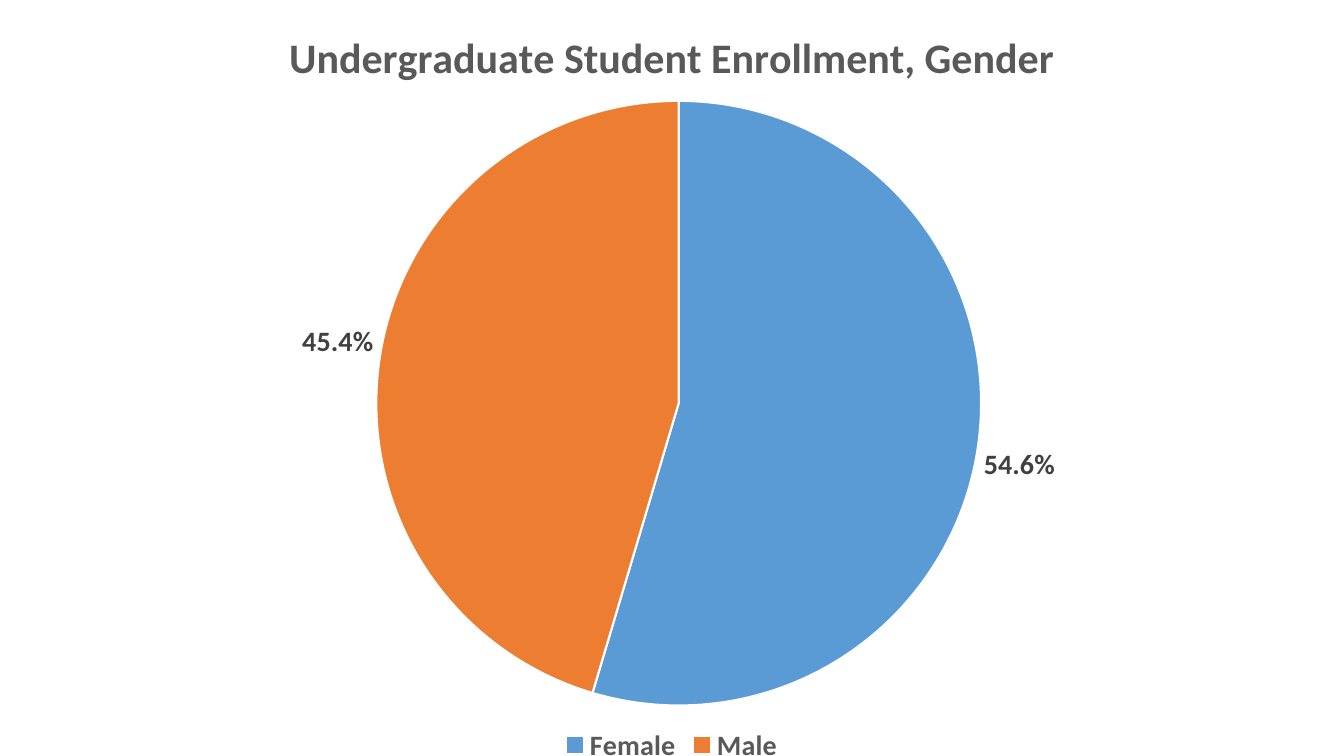
from lxml import etree
from pptx import Presentation
from pptx.chart.data import CategoryChartData
from pptx.dml.color import RGBColor
from pptx.enum.chart import XL_CHART_TYPE, XL_LABEL_POSITION, XL_LEGEND_POSITION
from pptx.oxml.ns import qn
from pptx.util import Inches, Pt

PIE = XL_CHART_TYPE.PIE
OUTSIDE = XL_LABEL_POSITION.OUTSIDE_END
BOTTOM = XL_LEGEND_POSITION.BOTTOM
BLUE = RGBColor(0x5B, 0x9B, 0xD5)
ORANGE = RGBColor(0xED, 0x7D, 0x31)
WHITE = RGBColor(0xFF, 0xFF, 0xFF)
GRAY = RGBColor(0x59, 0x59, 0x59)
DARK = RGBColor(0x40, 0x40, 0x40)


class Deck:
    face = "Calibri"

    def __init__(self, width, height):
        self.show = Presentation()
        self.show.slide_width = Inches(width)
        self.show.slide_height = Inches(height)
        self.slide = self.show.slides.add_slide(self.show.slide_layouts[6])

    def style(self, font, size, color):
        font.name = self.face
        font.size = Pt(size)
        font.bold = True
        font.color.rgb = color

    def place(self, chart, **frame):
        area = chart._chartSpace.chart.plotArea
        for old in area.findall(qn("c:layout")):
            area.remove(old)
        layout = etree.Element(qn("c:layout"))
        manual = etree.SubElement(layout, qn("c:manualLayout"))
        parts = {"layoutTarget": "inner", "xMode": "edge", "yMode": "edge", **frame}
        for name, value in parts.items():
            etree.SubElement(manual, qn(f"c:{name}")).set("val", str(value))
        area.insert(0, layout)

    def pie(self, box, title, shares, colors):
        data = CategoryChartData(number_format="0.0%")
        data.categories = list(shares)
        data.add_series("Series 1", list(shares.values()))
        chart = self.slide.shapes.add_chart(PIE, *map(Inches, box), data).chart
        chart.font.name = self.face
        chart.font.size = Pt(10)

        chart.has_title = True
        head = chart.chart_title
        head.include_in_layout = False
        head.text_frame.text = title
        self.style(head.text_frame.paragraphs[0].font, 30, GRAY)

        chart.has_legend = True
        chart.legend.position = BOTTOM
        chart.legend.include_in_layout = False
        self.style(chart.legend.font, 20, GRAY)

        plot = chart.plots[0]
        plot.vary_by_categories = True
        series = plot.series[0]
        for index, color in enumerate(colors):
            look = series.points[index].format
            look.fill.solid()
            look.fill.fore_color.rgb = color
            look.line.color.rgb = WHITE
            look.line.width = Pt(1.5)

        labels = series.data_labels
        labels.show_value = True
        labels.show_percentage = False
        labels.number_format = "0.0%"
        labels.number_format_is_linked = False
        labels.position = OUTSIDE
        self.style(labels.font, 20, DARK)
        return chart


def main():
    deck = Deck(13.33, 7.5)
    chart = deck.pie(
        (0, 0, 13.33, 7.62),
        "Undergraduate Student Enrollment, Gender",
        {"Female": 0.546, "Male": 0.454},
        (BLUE, ORANGE),
    )
    deck.place(chart, x=0.28, y=0.13, w=0.45, h=0.79)
    deck.show.save("out.pptx")


if __name__ == "__main__":
    main()
